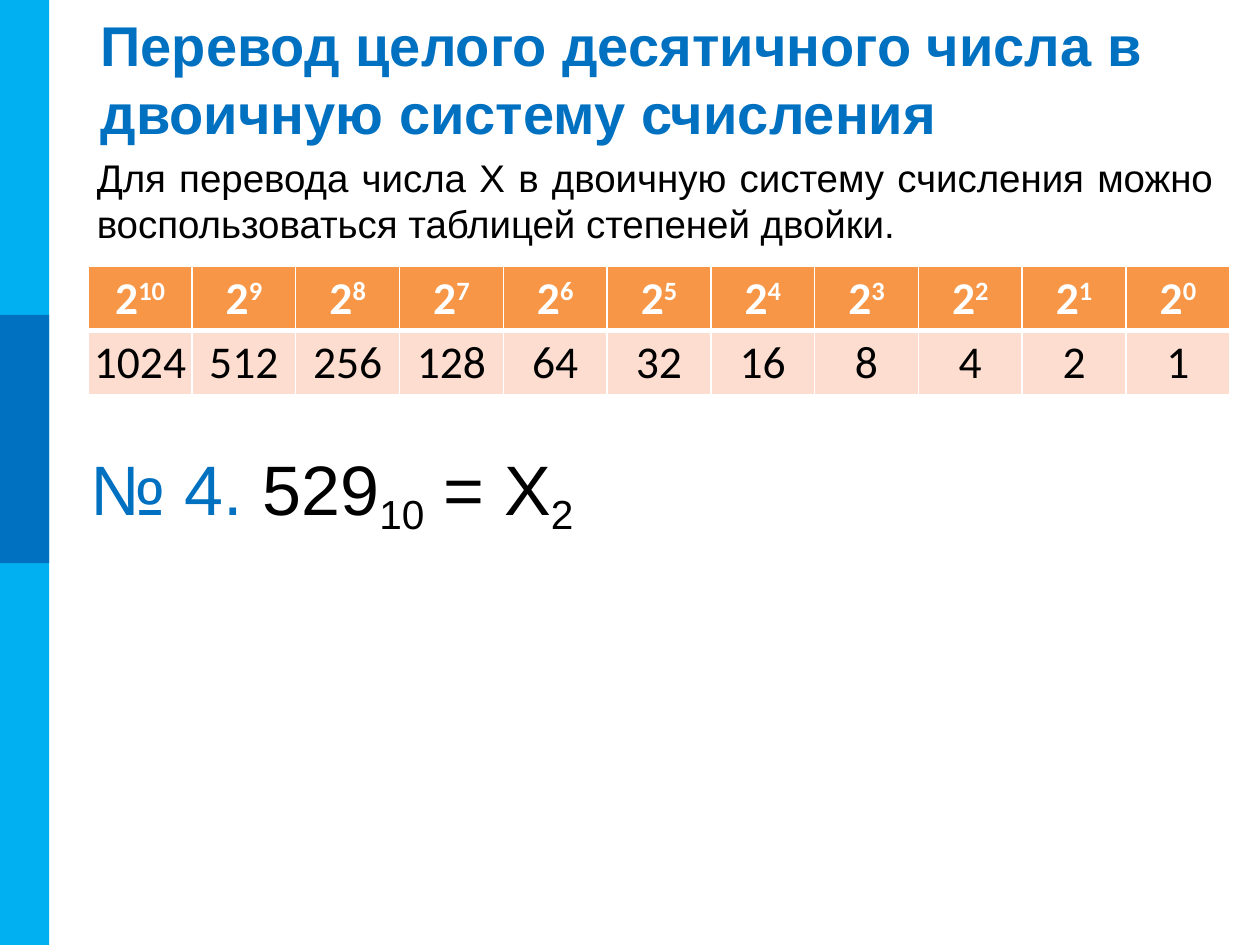
import pptx
import pptx.dml.color
import pptx.enum.shapes
import pptx.enum.text
import pptx.oxml
import pptx.oxml.ns
import pptx.util

Inches = pptx.util.Inches
Pt = pptx.util.Pt
ALIGN = pptx.enum.text.PP_ALIGN
ANCHOR = pptx.enum.text.MSO_ANCHOR

SKY, BLUE, BLACK, WHITE = "00B0F0", "0070C0", "000000", "FFFFFF"
ORANGE, PEACH = "F79646", "FCDDCF"
POWERS = range(10, -1, -1)
WIDTH, HEIGHT = 9.06, 0.51


def color(code):
    return pptx.dml.color.RGBColor.from_string(code)


def assign(item, values):
    for name, value in values.items():
        setattr(item, name, value)


def add_bar(slide, top, height, fill):
    kind = pptx.enum.shapes.MSO_SHAPE.RECTANGLE
    bar = slide.shapes.add_shape(
        kind, Inches(0), Inches(top), Inches(0.39), Inches(height))
    bar.shadow.inherit = False
    bar.fill.solid()
    bar.fill.fore_color.rgb = color(fill)
    bar.line.fill.background()


def write(para, runs, font, form):
    """Fill a paragraph from (text, colour, baseline percent) runs."""
    assign(para, form)
    for text, code, base in runs:
        run = para.add_run()
        run.text = text
        assign(run.font, font)
        run.font.color.rgb = color(code)
        if base:
            run.font._element.set("baseline", str(base * 1000))


def add_text(slide, box, runs, font, form, anchor=ANCHOR.TOP):
    frame = slide.shapes.add_textbox(*map(Inches, box)).text_frame
    assign(frame, {"word_wrap": True, "vertical_anchor": anchor})
    write(frame.paragraphs[0], runs, {"name": "Arial", **font}, form)


def add_edges(cell, widths):
    """Draw white cell borders, widths in points by side."""
    props = cell._tc.get_or_add_tcPr()
    space = pptx.oxml.ns.nsdecls("a")
    for side, width in widths.items():
        props.append(pptx.oxml.parse_xml(
            f'<a:ln{side} {space} w="{Pt(width)}"><a:solidFill>'
            f'<a:srgbClr val="{WHITE}"/></a:solidFill></a:ln{side}>'))


def fill_cell(cell, runs, bold, fill, edges):
    add_edges(cell, edges)
    cell.fill.solid()
    cell.fill.fore_color.rgb = color(fill)
    sides = ("left", "right", "top", "bottom")
    assign(cell, {f"margin_{side}": Inches(0.04) for side in sides})
    font = {"name": "Calibri", "size": Pt(26), "bold": bold}
    write(cell.text_frame.paragraphs[0], runs, font,
          {"alignment": ALIGN.CENTER})


def add_powers(slide):
    count = len(POWERS)
    table = slide.shapes.add_table(
        2, count, Inches(0.7), Inches(2.11),
        Inches(WIDTH), Inches(2 * HEIGHT)).table
    for row in table.rows:
        row.height = Inches(HEIGHT)
    for col, power in enumerate(POWERS):
        table.columns[col].width = Inches(WIDTH / count)
        head = [("2", WHITE, 0), (str(power), WHITE, 30)]
        fill_cell(table.cell(0, col), head, True, ORANGE,
                  {"L": 1, "R": 1, "T": 1, "B": 3})
        value = [(str(2 ** power), BLACK, 0)]
        fill_cell(table.cell(1, col), value, False, PEACH,
                  {"L": 1, "R": 1, "T": 3, "B": 1})


def main():
    deck = pptx.Presentation()
    assign(deck, {"slide_width": Inches(10), "slide_height": Inches(7.5)})
    slide = deck.slides.add_slide(deck.slide_layouts[6])

    add_bar(slide, 0, 7.5, SKY)
    add_bar(slide, 2.5, 1.97, BLUE)
    title = "Перевод целого десятичного числа в двоичную систему счисления"
    add_text(slide, (0.7, 0.3, 9.02, 0.64), [(title, BLUE, 0)],
             {"size": Pt(32), "bold": True}, {}, ANCHOR.MIDDLE)
    intro = ("Для перевода числа Х в двоичную систему счисления можно "
             "воспользоваться таблицей степеней двойки.")
    add_text(slide, (0.67, 1.17, 9.06, 0.85), [(intro, BLACK, 0)],
             {"size": Pt(22)},
             {"alignment": ALIGN.JUSTIFY, "space_before": Pt(2)})
    task = [("№ 4. ", BLUE, 0), ("529", BLACK, 0), ("10", BLACK, -20),
            (" = Х", BLACK, 0), ("2", BLACK, -20)]
    add_text(slide, (0.62, 3.52, 4.41, 0.47), task, {"size": Pt(40)},
             {"alignment": ALIGN.JUSTIFY, "space_before": Pt(5),
              "line_spacing": 0.9})
    add_powers(slide)
    deck.save("out.pptx")


if __name__ == "__main__":
    main()
